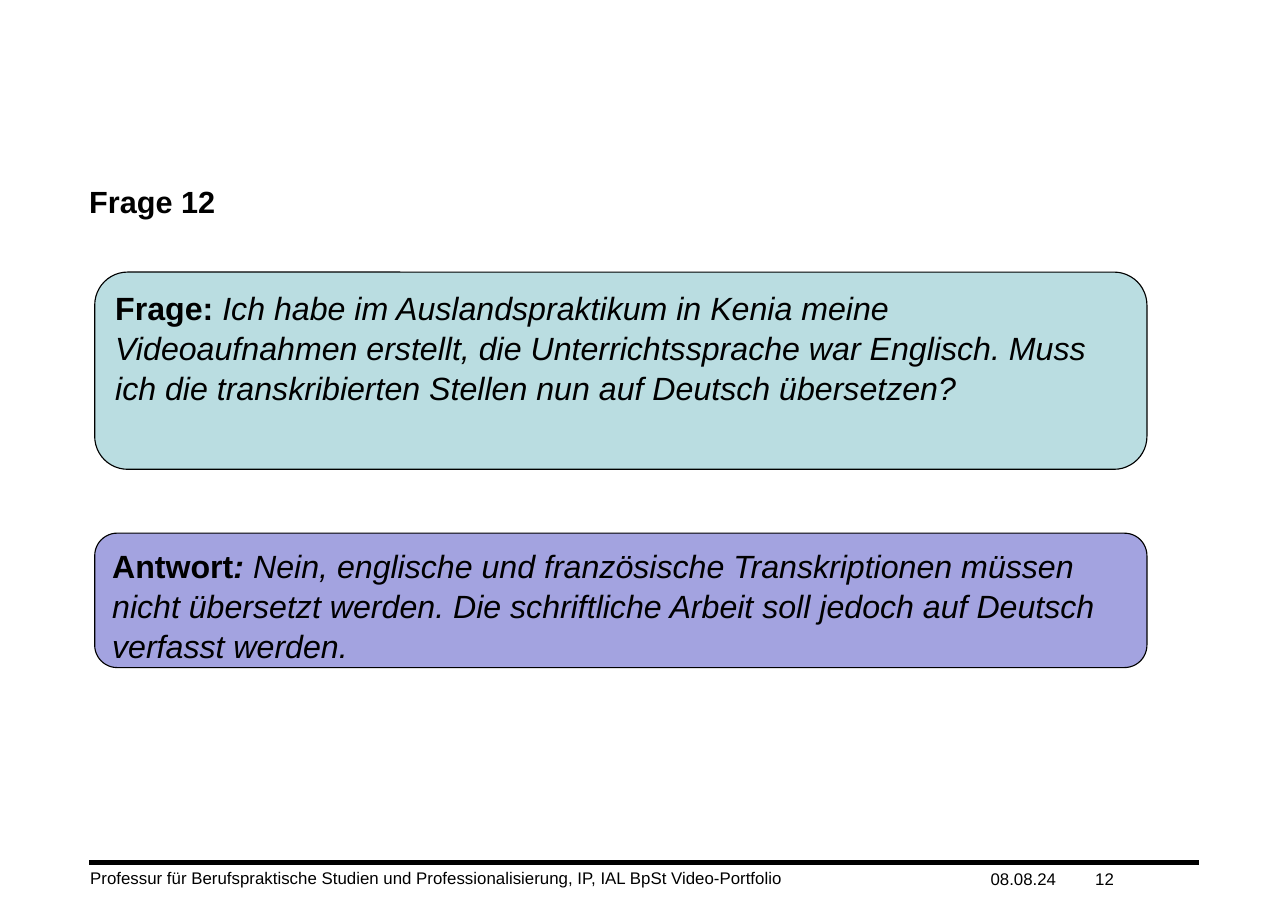
"""Build the slide for question 12 with its answer and footer."""
import pptx
import pptx.dml.color
import pptx.enum.shapes
import pptx.enum.text
import pptx.oxml
import pptx.util
from pptx.util import Inches

BLACK = pptx.dml.color.RGBColor(0x00, 0x00, 0x00)
TEAL = pptx.dml.color.RGBColor(0xBA, 0xDD, 0xE1)
LILAC = pptx.dml.color.RGBColor(0xA3, 0xA3, 0xE0)
TOP = pptx.enum.text.MSO_ANCHOR.TOP
BOTTOM = pptx.enum.text.MSO_ANCHOR.BOTTOM

HEADING = "Frage 12"
CARDS = [
    (2.47, 1.79, TEAL, [
        ("Frage: ", True, False),
        ("Ich habe im Auslandspraktikum in Kenia meine Videoaufnahmen erstellt, "
         "die Unterrichtssprache war Englisch. Muss ich die transkribierten "
         "Stellen nun auf Deutsch übersetzen?", False, True),
    ]),
    (4.84, 1.22, LILAC, [
        ("Antwort", True, False),
        (": ", True, True),
        ("Nein, englische und französische Transkriptionen müssen nicht übersetzt "
         "werden. Die schriftliche Arbeit soll jedoch auf Deutsch verfasst werden.",
         False, True),
    ]),
]
FOOTER = [
    ("Professur für Berufspraktische Studien und Professionalisierung, IP, "
     "IAL BpSt Video-Portfolio", (0.72, 7.83, 9.35, 0.29), TOP, (0.1, 0.05)),
    ("08.08.24", (8.99, 7.87, 0.95, 0.2), BOTTOM, (0, 0)),
    ("12", (9.94, 7.87, 0.94, 0.2), BOTTOM, (0, 0)),
]


def write(frame, runs, size=11, anchor=TOP, insets=(0.1, 0.05), spacing=1.0):
    """Fill a text frame with (text, bold, italic) runs."""
    frame.word_wrap = True
    frame.auto_size = pptx.enum.text.MSO_AUTO_SIZE.NONE
    frame.vertical_anchor = anchor
    frame.margin_left = frame.margin_right = Inches(insets[0])
    frame.margin_top = frame.margin_bottom = Inches(insets[1])
    paragraph = frame.paragraphs[0]
    paragraph.alignment = pptx.enum.text.PP_ALIGN.LEFT
    paragraph.line_spacing = spacing
    for text, bold, italic in runs:
        run = paragraph.add_run()
        run.text = text
        run.font.name = "Arial"
        run.font.size = pptx.util.Pt(size)
        run.font.bold = bold
        run.font.italic = italic
        run.font.color.rgb = BLACK


def main():
    """Place heading, cards and footer."""
    deck = pptx.Presentation()
    deck.slide_width, deck.slide_height = Inches(11.69), Inches(8.27)
    slide = deck.slides.add_slide(deck.slide_layouts[5])

    rule = slide.shapes.add_connector(
        pptx.enum.shapes.MSO_CONNECTOR.STRAIGHT,
        Inches(0.81), Inches(7.83), Inches(10.88), Inches(7.83))
    rule.line.color.rgb = BLACK
    rule.line.width = pptx.util.Pt(3)
    rule._element.spPr.append(pptx.oxml.parse_xml(
        '<a:effectLst xmlns:a="http://schemas.openxmlformats.org/drawingml/2006/main"/>'))

    for text, place, anchor, insets in FOOTER:
        note = slide.shapes.add_textbox(*map(Inches, place))
        write(note.text_frame, [(text, False, False)], anchor=anchor, insets=insets)

    heading = slide.shapes.title
    heading.left, heading.top = Inches(0.81), Inches(1.65)
    heading.width, heading.height = Inches(10.08), Inches(0.4)
    write(heading.text_frame, [(HEADING, True, False)], size=20, insets=(0, 0),
          spacing=1.04)

    for top, height, colour, runs in CARDS:
        card = slide.shapes.add_shape(
            pptx.enum.shapes.MSO_SHAPE.ROUNDED_RECTANGLE,
            Inches(0.86), Inches(top), Inches(9.55), Inches(height))
        card.shadow.inherit = False
        card.fill.solid()
        card.fill.fore_color.rgb = colour
        card.line.color.rgb = BLACK
        card.line.width = pptx.util.Pt(0.75)
        write(card.text_frame, runs, size=21, spacing=1.04)

    deck.save("out.pptx")


if __name__ == "__main__":
    main()
